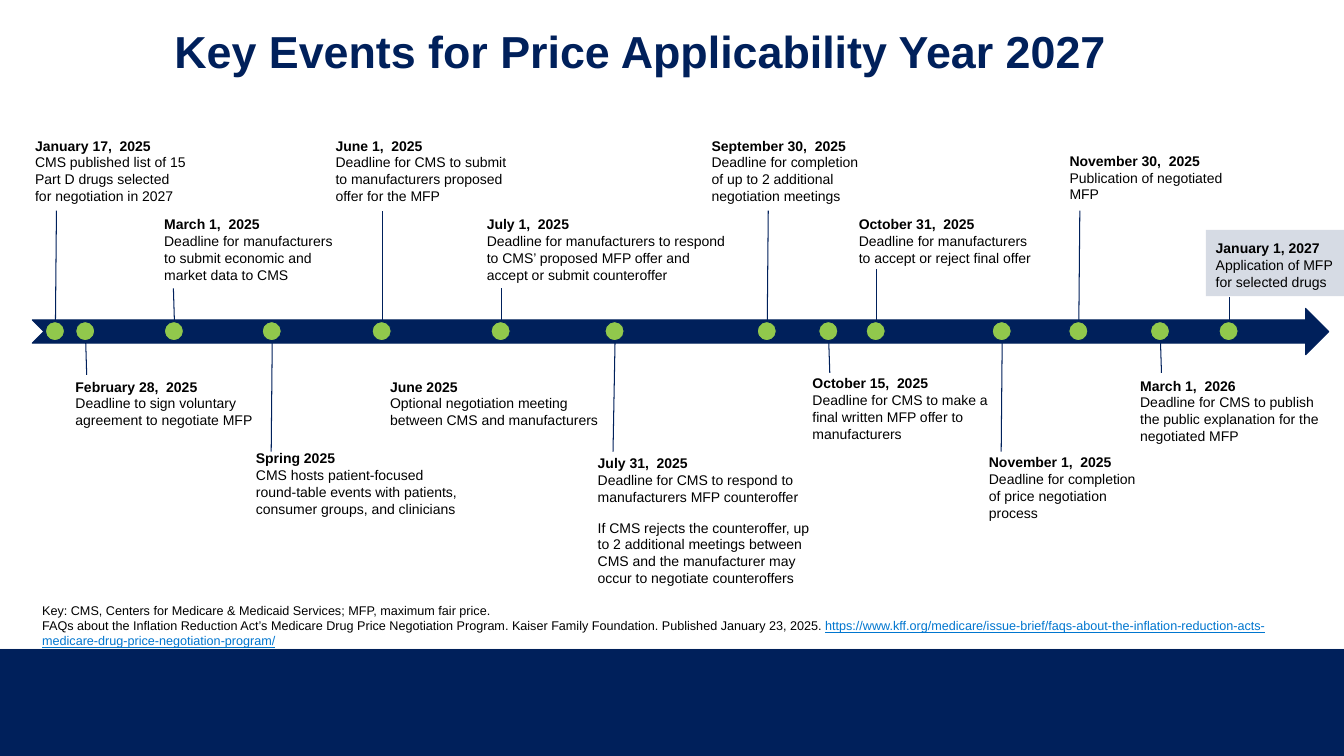
from dataclasses import dataclass

from lxml import etree
from pptx import Presentation
from pptx.dml.color import RGBColor
from pptx.enum.shapes import MSO_CONNECTOR, MSO_SHAPE
from pptx.enum.text import MSO_ANCHOR, PP_ALIGN
from pptx.oxml.ns import qn
from pptx.util import Emu, Pt

RECTANGLE = MSO_SHAPE.RECTANGLE
OVAL = MSO_SHAPE.OVAL
NOTCHED_ARROW = MSO_SHAPE.NOTCHED_RIGHT_ARROW
STRAIGHT = MSO_CONNECTOR.STRAIGHT
LEFT = PP_ALIGN.LEFT
TOP, MIDDLE = MSO_ANCHOR.TOP, MSO_ANCHOR.MIDDLE

PAGE_WIDTH, PAGE_HEIGHT = 1333, 750
DOT = 19
INSET = 10


@dataclass(frozen=True)
class Theme:
    font: str = "Arial"
    navy: str = "00205B"
    green: str = "91C84C"
    trim: str = "F8F8F8"
    black: str = "000000"
    link: str = "0076CF"
    title_size: float = 32
    event_size: float = 10
    note_size: float = 9
    line_width: float = 0.75
    highlight_opacity: int = 16


THEME = Theme()


@dataclass(frozen=True)
class Event:
    date: str
    text: str
    box: tuple
    dot: int = 0       # where the leader leaves the arrow
    tip: tuple = ()    # where the leader ends, near the text
    highlight: bool = False


EVENTS = [
    Event("January 17,  2025", "CMS published list of 15 Part D drugs selected for negotiation in 2027",
          (25, 126, 172, 82), 55, (56, 209)),
    Event("February 28,  2025", "Deadline to sign voluntary agreement to negotiate MFP",
          (65, 365, 201, 59), 85, (86, 372)),
    Event("March 1,  2025", "Deadline for manufacturers to submit economic and market data to CMS",
          (153, 204, 191, 59), 173, (172, 286)),
    Event("Spring 2025", "CMS hosts patient-focused round-table events with patients, "
          "consumer groups, and clinicians",
          (244, 436, 225, 59), 270, (269, 448)),
    Event("June 1,  2025", "Deadline for CMS to submit to manufacturers proposed offer for the MFP",
          (323, 126, 189, 59), 379, (379, 209)),
    Event("June 2025", "Optional negotiation meeting between CMS and manufacturers",
          (377, 365, 241, 59)),
    Event("July 1,  2025", "Deadline for manufacturers to respond to CMS’ proposed MFP offer "
          "and accept or submit counteroffer",
          (473, 204, 256, 59), 497, (497, 286)),
    Event("July 31,  2025", "Deadline for CMS to respond to manufacturers MFP counteroffer",
          (583, 441, 241, 59), 610, (608, 448)),
    Event("", "If CMS rejects the counteroffer, up to 2 additional meetings between CMS "
          "and the manufacturer may occur to negotiate counteroffers",
          (583, 505, 241, 59)),
    Event("September 30,  2025", "Deadline for completion of up to 2 additional negotiation meetings",
          (696, 126, 172, 59), 761, (762, 209)),
    Event("October 15,  2025", "Deadline for CMS to make a final written MFP offer to manufacturers",
          (796, 362, 201, 59), 822, (823, 370)),
    Event("October 31,  2025", "Deadline for manufacturers to accept or reject final offer",
          (842, 204, 201, 59), 869, (869, 267)),
    Event("November 1,  2025", "Deadline for completion of price negotiation process",
          (971, 440, 172, 59), 994, (993, 448)),
    Event("November 30,  2025", "Publication of negotiated MFP",
          (1051, 141, 172, 59), 1070, (1071, 209)),
    Event("March 1,  2026", "Deadline for CMS to publish the public explanation for the negotiated MFP",
          (1121, 364, 209, 59), 1151, (1152, 370)),
    Event("January 1, 2027", "Application of MFP for selected drugs",
          (1196, 228, 137, 66), 1219, (1219, 295), True),
]


def px(length):
    return Emu(length * 9144)


def color(code):
    return RGBColor.from_string(code)


def add_block(page, kind, box, fill, outlined=False):
    block = page.shapes.add_shape(kind, *map(px, box))
    block.shadow.inherit = False
    block.fill.solid()
    block.fill.fore_color.rgb = color(fill)
    if outlined:
        block.line.color.rgb = color(THEME.navy)
        block.line.width = Pt(THEME.line_width)
    else:
        block.line.fill.background()
    return block


def add_span(para, text, size=THEME.event_size, bold=False, underline=False, ink=THEME.black):
    span = para.add_run()
    span.text = text
    span.font.name = THEME.font
    span.font.size = Pt(size)
    span.font.bold = bold
    span.font.underline = underline
    span.font.color.rgb = color(ink)


def write(shape, paragraphs, anchor=TOP, margin=INSET, spacing=None):
    """Each paragraph is a list of (text, format) pairs."""
    frame = shape.text_frame
    frame.word_wrap = True
    frame.vertical_anchor = anchor
    frame.margin_left = frame.margin_right = px(INSET)
    frame.margin_top = frame.margin_bottom = px(margin)
    for index, spans in enumerate(paragraphs):
        para = frame.add_paragraph() if index else frame.paragraphs[0]
        para.alignment = LEFT
        if spacing:
            para.line_spacing = spacing
        for text, style in spans:
            add_span(para, text, **style)


def add_footer_band(page, box):
    left, top, width, height = box
    add_block(page, RECTANGLE, box, THEME.trim)
    add_block(page, RECTANGLE, (left, top + 1, width, height - 1), THEME.navy)


def add_title(page, box):
    title = page.shapes.add_textbox(*map(px, box))
    style = dict(size=THEME.title_size, bold=True, ink=THEME.navy)
    write(title, [[("Key Events for Price Applicability Year 2027", style)]],
          anchor=MIDDLE, margin=5, spacing=0.9)


def add_event_text(page, event):
    if event.highlight:
        note = add_block(page, RECTANGLE, event.box, THEME.navy)
        tint = note.fill._xPr.find(qn("a:solidFill"))[0]
        etree.SubElement(tint, qn("a:alpha")).set("val", str(THEME.highlight_opacity * 1000))
    else:
        note = page.shapes.add_textbox(*map(px, event.box))
    heading = [[(event.date, dict(bold=True))]] if event.date else []
    write(note, heading + [[(event.text, {})]])


def add_marker(page, event, axis_top):
    add_block(page, OVAL, (event.dot - DOT // 2 - 1, axis_top, DOT, DOT), THEME.green, outlined=True)
    tip_x, tip_y = event.tip
    start_y = axis_top if tip_y < axis_top else axis_top + DOT + 1
    leader = page.shapes.add_connector(STRAIGHT, *map(px, (event.dot, start_y, tip_x, tip_y)))
    leader.line.color.rgb = color(THEME.navy)
    leader.line.width = Pt(THEME.line_width)
    etree.SubElement(leader._element.spPr, qn("a:effectLst"))


def add_timeline(page, box):
    left, top, width, height = box
    add_block(page, NOTCHED_ARROW, box, THEME.navy, outlined=True)
    for event in EVENTS:
        add_event_text(page, event)
    # Dots and leaders sit above the text
    for event in EVENTS:
        if event.tip:
            add_marker(page, event, top + (height - DOT) // 2)


def add_sources(page, box):
    note = dict(size=THEME.note_size)
    link = dict(size=THEME.note_size, underline=True, ink=THEME.link)
    write(page.shapes.add_textbox(*map(px, box)), [
        [("Key: CMS, Centers for Medicare & Medicaid Services; MFP, maximum fair price.", note)],
        [("FAQs about the Inflation Reduction Act’s Medicare Drug Price Negotiation Program. "
          "Kaiser Family Foundation. Published January 23, 2025. ", note),
         ("https://www.kff.org/medicare/issue-brief/faqs-about-the-inflation-reduction-acts-"
          "medicare-drug-price-negotiation-program/", link)],
    ])


def main():
    deck = Presentation()
    deck.slide_width, deck.slide_height = px(PAGE_WIDTH), px(PAGE_HEIGHT)
    page = deck.slides.add_slide(deck.slide_layouts[6])
    add_footer_band(page, (0, 643, PAGE_WIDTH, PAGE_HEIGHT - 643))
    add_title(page, (163, 13, 989, 82))
    add_timeline(page, (32, 306, 1286, 46))
    add_sources(page, (32, 588, 1286, 53))
    deck.save("out.pptx")


if __name__ == "__main__":
    main()
